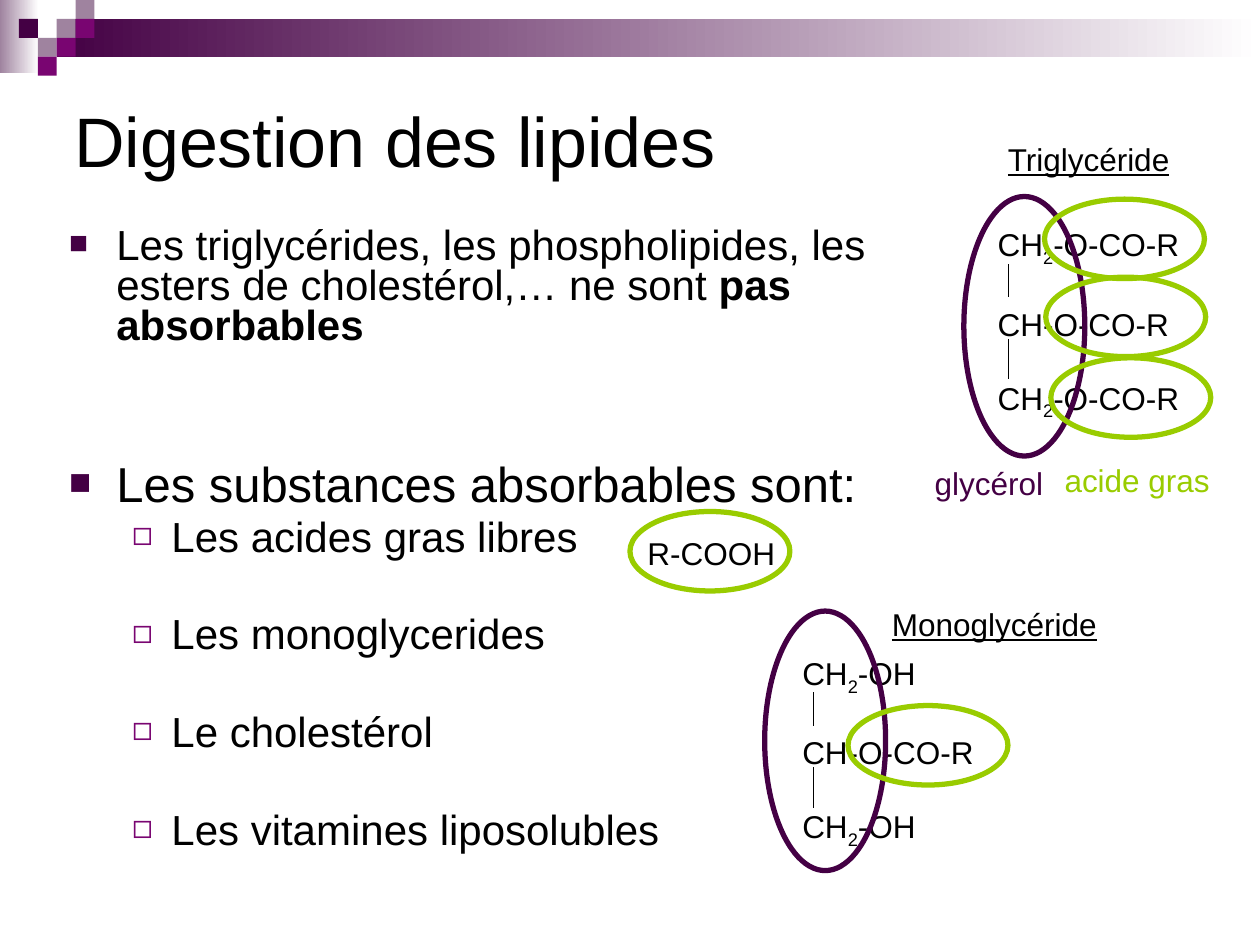
from lxml import etree
from pptx import Presentation
from pptx.dml.color import RGBColor
from pptx.enum.shapes import MSO_CONNECTOR, MSO_SHAPE
from pptx.enum.text import MSO_ANCHOR, MSO_AUTO_SIZE
from pptx.oxml.ns import qn
from pptx.util import Pt

RECT, OVAL = MSO_SHAPE.RECTANGLE, MSO_SHAPE.OVAL
STRAIGHT = MSO_CONNECTOR.STRAIGHT
MIDDLE = MSO_ANCHOR.MIDDLE
GROW = MSO_AUTO_SIZE.SHAPE_TO_FIT_TEXT

BLACK, WHITE = "000000", "FFFFFF"
PLUM, PURPLE, MAUVE, GREEN = "440044", "790571", "9F839F", "99CC00"
hex_color = RGBColor.from_string

prs = Presentation()
prs.slide_width, prs.slide_height = Pt(720), Pt(540)
slide = prs.slides.add_slide(prs.slide_layouts[6])
shapes = slide.shapes


def add_shape(kind, box, fills=(), line=None):
    """One fill colour is solid, two make a gradient, none leaves it open."""
    shape = shapes.add_shape(kind, *map(Pt, box))
    shape.shadow.inherit = False
    if len(fills) == 2:
        shape.fill.gradient()
        shape.fill.gradient_angle = 0
        for stop, color in zip(shape.fill.gradient_stops, fills):
            stop.color.rgb = hex_color(color)
    elif fills:
        shape.fill.solid()
        shape.fill.fore_color.rgb = hex_color(fills[0])
    else:
        shape.fill.background()
    if line:
        shape.line.color.rgb = hex_color(line)
        shape.line.width = Pt(3)
    else:
        shape.line.fill.background()


def add_text(box, lines, frame_format, color=BLACK, marked=None):
    """Each line is (text, font format, paragraph format); |text| is marked."""
    frame = shapes.add_textbox(*map(Pt, box)).text_frame
    for name, value in frame_format.items():
        setattr(frame, name, value)
    for number, (text, font_format, paragraph_format) in enumerate(lines):
        paragraph = frame.add_paragraph() if number else frame.paragraphs[0]
        for name, value in paragraph_format.items():
            setattr(paragraph, name, value)
        for index, part in enumerate(text.split("|")):
            if not part:
                continue
            run = paragraph.add_run()
            run.text = part
            run.font.name = "Arial"
            run.font.color.rgb = hex_color(color)
            for name, value in font_format.items():
                setattr(run.font, name, value)
            if index % 2:
                for name, value in marked.items():
                    run._r.get_or_add_rPr().set(name, value)
    return frame


# Header bands and the small squares on their grid
add_shape(RECT, (0, 0, 22, 42), (MAUVE, WHITE))
add_shape(RECT, (32.4, 10.8, 687.6, 21.6), (PLUM, WHITE))
SQUARE = 10.8
for column, row, color in [
    (3, 1, MAUVE), (4, 0, MAUVE), (4, 1, PURPLE), (2, 2, MAUVE),
    (1, 1, PLUM), (3, 2, PURPLE), (2, 3, PURPLE),
]:
    add_shape(RECT, (column * SQUARE, row * SQUARE, SQUARE, SQUARE), (color,))

# Title
add_text((35.3, 52.6, 648, 54), [("Digestion des lipides", {"size": Pt(40)}, {})],
         {"word_wrap": True, "vertical_anchor": MIDDLE})

# Bulleted text: level, size, space before, wording
outline = [
    (0, 24, 4.8, "Les triglycérides, les phospholipides, les esters de "
                 "cholestérol,… ne sont |pas absorbables|"),
    (0, 28, 66.1, "Les substances absorbables sont:"),
    (1, 24, 4.8, "Les acides gras libres"),
    (1, 24, 32.7, "Les monoglycerides"),
    (1, 24, 32.7, "Le cholestérol"),
    (1, 24, 32.7, "Les vitamines liposolubles"),
]
body = add_text(
    (32.4, 126.7, 475.2, 231.8),
    [(text, {"size": Pt(size)},
      {"level": level, "line_spacing": 0.8, "space_before": Pt(before)})
     for level, size, before, text in outline],
    {"word_wrap": True}, marked={"b": "1"})
bullets = [(27, 27, PLUM, "75000", "■"), (58.5, 22.5, PURPLE, "80000", "◻")]
for paragraph, (level, *_) in zip(body.paragraphs, outline):
    margin, hanging, color, size, symbol = bullets[level]
    properties = paragraph._p.get_or_add_pPr()
    properties.set("marL", str(Pt(margin)))
    properties.set("indent", str(-Pt(hanging)))
    bullet_color = etree.SubElement(properties, qn("a:buClr"))
    etree.SubElement(bullet_color, qn("a:srgbClr"), val=color)
    etree.SubElement(properties, qn("a:buSzPct"), val=size)
    etree.SubElement(properties, qn("a:buFont"), typeface="Arial")
    etree.SubElement(properties, qn("a:buChar"), char=symbol)

# Molecules: formula rows with the bonds between them
LABEL = {"word_wrap": False, "auto_size": GROW}
for left, top, width, end_group in [
    (563, 125.3, 118.8, "-O-CO-R"), (451.4, 370.1, 112.3, "-OH"),
]:
    end_row = "CH|2|" + end_group
    add_text((left, top, width, 115.2),
             [(text, {"size": Pt(18)}, {"space_before": Pt(before)})
              for text, before in [(end_row, 0), ("CH-O-CO-R", 20.7), (end_row, 20.7)]],
             LABEL, marked={"baseline": "-25000"})
    for start, end in [(25.6, 44.6), (68.4, 91.4)]:
        x = left + 13.4
        bond = shapes.add_connector(STRAIGHT, Pt(x), Pt(top + start), Pt(x), Pt(top + end))
        bond.line.color.rgb = hex_color(BLACK)
        bond.line.width = Pt(0.75)
        etree.SubElement(bond._element.spPr, qn("a:effectLst"))

# Labels
for left, top, width, text, color, underline in [
    (601.2, 259.9, 97.2, "acide gras", GREEN, False),
    (527, 261.4, 76.3, "glycérol", PLUM, False),
    (568.8, 76.3, 107.3, "Triglycéride", BLACK, True),
    (362.9, 301.7, 87.8, "R-COOH", BLACK, False),
    (502.6, 342, 131.8, "Monoglycéride", BLACK, True),
]:
    add_text((left, top, width, 28.8),
             [(text, {"size": Pt(18), "underline": underline}, {})], LABEL, color)

# Rings around glycerol and the fatty acids
for left, top in [(550.8, 112.3), (437, 349.2)]:
    add_shape(OVAL, (left, top, 69.1, 148.3), line=PLUM)
for left, top in [(596.9, 113.8), (597.6, 158.4), (600.5, 204.5),
                  (360, 292.3), (484.6, 403.2)]:
    add_shape(OVAL, (left, top, 91.4, 45.4), line=GREEN)

prs.save("out.pptx")
